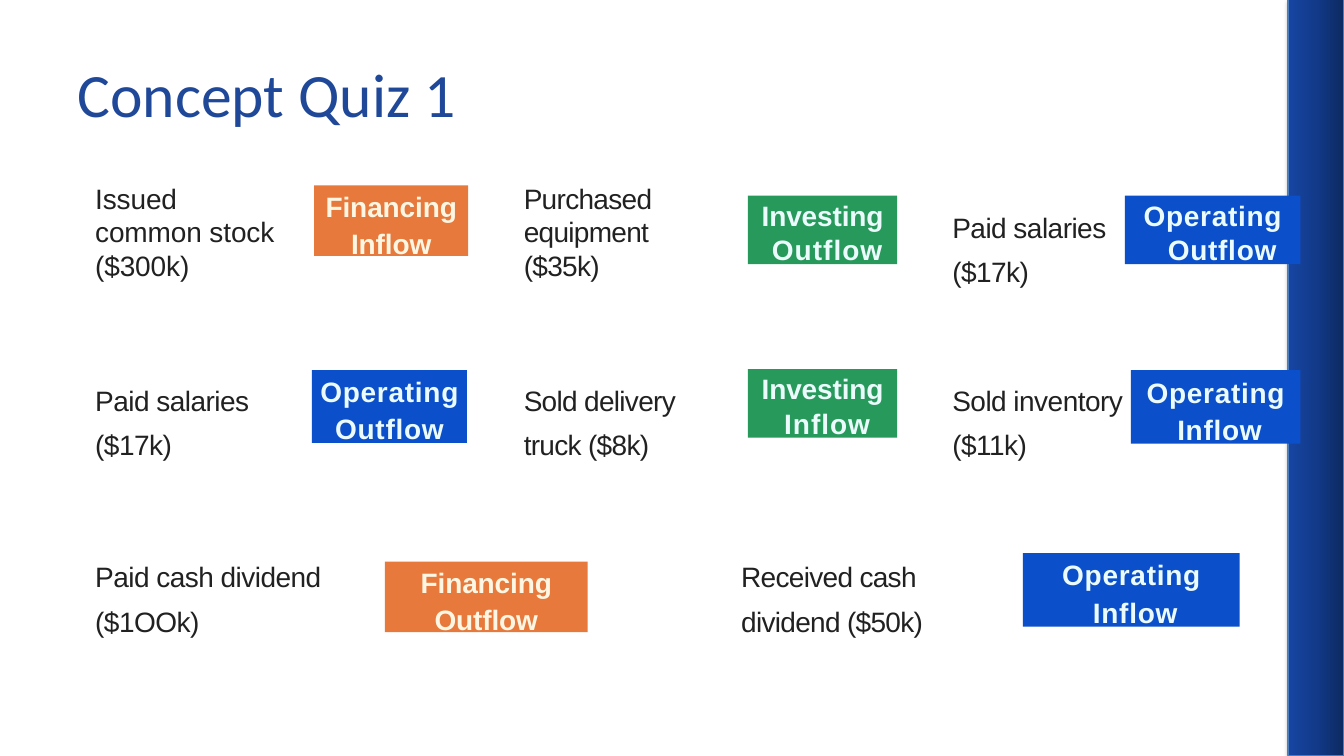
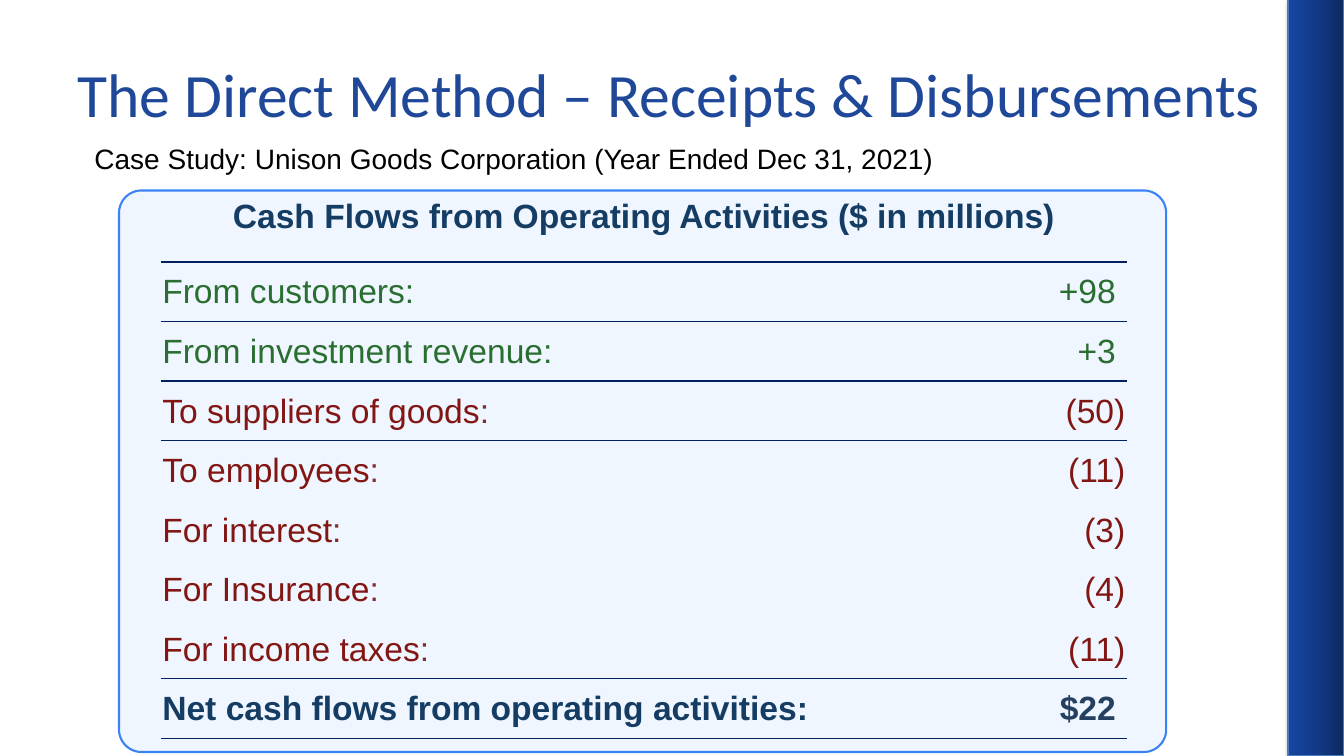
from copy import deepcopy
from dataclasses import dataclass

from lxml import etree
from pptx import Presentation
from pptx.dml.color import RGBColor
from pptx.enum.shapes import MSO_SHAPE
from pptx.enum.text import MSO_ANCHOR, MSO_AUTO_SIZE, PP_ALIGN
from pptx.oxml.ns import qn
from pptx.util import Cm, Pt

RECTANGLE, ROUNDED = MSO_SHAPE.RECTANGLE, MSO_SHAPE.ROUNDED_RECTANGLE
TOP, MIDDLE = MSO_ANCHOR.TOP, MSO_ANCHOR.MIDDLE
LEFT, CENTER, RIGHT = PP_ALIGN.LEFT, PP_ALIGN.CENTER, PP_ALIGN.RIGHT
FIXED = MSO_AUTO_SIZE.NONE
TITLE_ONLY = 5
PLAIN_TABLE = "{2D5ABB26-0587-4C30-8999-92F81FD0307C}"
BODY_FONT, TITLE_FONT = "Arial", "Calibri"

COLORS = {
    "title": "1F4899",
    "band_dark": "0D2960",
    "band_mid": "123A89",
    "band_light": "1645A2",
    "band_line": "4B7EBC",
    "black": "000000",
    "note": "212121",
    "orange": "E6793B",
    "green": "26995B",
    "blue": "0C4FCA",
    "cream": "FDF6E2",
    "ice": "EBFBFB",
    "panel": "EFF6FF",
    "panel_line": "3B82F6",
    "rule": "002060",
    "heading": "153D64",
    "receipt": "2B6E31",
    "payment": "821613",
    "payment_colon": "802D2D",
    "total": "254061",
}


@dataclass(frozen=True)
class Category:
    name: str
    fill: str
    ink: str
    name_spacing: float
    flow_spacing: float


@dataclass(frozen=True)
class Note:
    """A transaction; lengths in cm, line pitch in points (0 for single)."""
    text: str
    left: float
    top: float
    width: float
    spacing: float
    pitch: float = 31.2


@dataclass(frozen=True)
class Tag:
    """A classification; lengths in cm, gap between lines in points."""
    category: Category
    flow: str
    left: float
    top: float
    width: float
    height: float
    shift: float = 0
    inset: float = 0.1
    gap: float = 2.5


@dataclass(frozen=True)
class Entry:
    label: str
    amount: str
    ink: str
    colon_ink: str
    amount_ink: str
    bold: bool = False


FINANCING = Category("Financing", "orange", "cream", -0.1, -0.1)
INVESTING = Category("Investing", "green", "ice", -0.1, 0.7)
OPERATING = Category("Operating", "blue", "ice", 0.5, 0.5)

# Quiz grid: three columns, three rows
COLUMNS = [2.36 + 10.8 * index for index in range(3)]
ROWS = (4.45, 9.3, 13.69)

NOTES = (
    Note("Issued common stock ($300k)", COLUMNS[0], ROWS[0], 4.62, -0.1, 0),
    Note("Purchased equipment ($35k)", COLUMNS[1], ROWS[0], 3.5, -0.5, 0),
    Note("Paid salaries ($17k)", COLUMNS[2], 4.93, 4.1, -0.4),
    Note("Paid salaries ($17k)", COLUMNS[0], ROWS[1], 4.1, -0.4),
    Note("Sold delivery truck ($8k)", COLUMNS[1], ROWS[1], 4.1, -0.5),
    Note("Sold inventory ($11k)", COLUMNS[2], ROWS[1], 4.5, -0.4),
    Note("Paid cash dividend ($1OOk)", COLUMNS[0], ROWS[2], 5.82, -0.4, 32.2),
    Note("Received cash dividend ($50k)", 18.64, ROWS[2], 4.9, -0.5, 32.2),
)

TAGS = (
    Tag(FINANCING, "Inflow", 7.92, 4.67, 3.88, 1.78),
    Tag(INVESTING, "Outflow", 18.85, 4.93, 3.76, 1.73, 0.23, 0.06, 0.7),
    Tag(OPERATING, "Outflow", 28.35, 4.93, 4.42, 1.73, 0.48, 0.06, 0.7),
    Tag(OPERATING, "Outflow", 7.86, 9.33, 3.91, 1.83),
    Tag(INVESTING, "Inflow", 18.85, 9.3, 3.76, 1.73, 0.23, 0.06, 0.7),
    Tag(OPERATING, "Inflow", 28.5, 9.33, 4.27, 1.85, 0.2, 0.12, 3),
    Tag(FINANCING, "Outflow", 9.7, 14.15, 5.11, 1.78),
    Tag(OPERATING, "Inflow", 25.78, 13.94, 5.46, 1.85, 0.2, 0.12, 3),
)


def receipt(label: str, amount: str) -> Entry:
    return Entry(label, amount, "receipt", "receipt", "receipt")


def payment(label: str, amount: str) -> Entry:
    return Entry(label, amount, "payment", "payment_colon", "payment")


ENTRIES = (
    receipt("From customers", "+98"),
    receipt("From investment revenue", "+3"),
    payment("To suppliers of goods", "(50)"),
    payment("To employees", "(11)"),
    payment("For interest", "(3)"),
    payment("For Insurance", "(4)"),
    payment("For income taxes", "(11)"),
    Entry("Net cash flows from operating activities", "$22",
          "heading", "heading", "total", True),
)
RULED_ROWS = {0, 2, 7, 8}


def color(name: str) -> RGBColor:
    return RGBColor.from_string(COLORS[name])


def set_font(font, ink: str, size: float, bold: bool = False, name: str = BODY_FONT) -> None:
    font.name, font.size, font.bold = name, Pt(size), bold
    font.color.rgb = color(ink)


def add_span(paragraph, text: str, spacing: float = 0):
    span = paragraph.add_run()
    span.text = text
    if spacing:
        span.font._element.set("spc", str(round(spacing * 100)))
    return span


def set_frame(frame, inset_top: float, inset_left: float = 0) -> None:
    frame.word_wrap, frame.auto_size = True, FIXED
    frame.vertical_anchor = TOP
    frame.margin_left, frame.margin_top = Cm(inset_left), Cm(inset_top)
    frame.margin_right = frame.margin_bottom = 0


def add_block(page, kind, left: float, top: float, width: float, height: float,
              fill: str, line: str = "", weight: float = 0):
    block = page.shapes.add_shape(kind, Cm(left), Cm(top), Cm(width), Cm(height))
    block.shadow.inherit = False
    block.fill.solid()
    block.fill.fore_color.rgb = color(fill)
    if line:
        block.line.color.rgb = color(line)
        block.line.width = Pt(weight)
    else:
        block.line.fill.background()
    return block


def add_band(page) -> None:
    """Draw the right-hand band and move it to the shared layout."""
    band = add_block(page, RECTANGLE, 32.46, 0, 1.41, 19.05, "band_mid", "band_line", 0.75)
    band.fill.gradient()
    band.fill.gradient_angle = 180
    properties = band.element.spPr
    stop_list = properties.find(qn("a:gradFill")).find(qn("a:gsLst"))
    stop_list.insert(1, deepcopy(stop_list[0]))
    names = ("band_dark", "band_mid", "band_light")
    for index, (stop, name) in enumerate(zip(band.fill.gradient_stops, names)):
        stop.position = index / 2
        stop.color.rgb = color(name)
    # Soft shadow
    shadow = etree.SubElement(properties.find(qn("a:effectLst")), qn("a:outerShdw"),
                              blurRad=str(Pt(3.1)), dist=str(Pt(1.8)),
                              dir="5400000", rotWithShape="0")
    tint = etree.SubElement(shadow, qn("a:srgbClr"), val=COLORS["black"])
    etree.SubElement(tint, qn("a:alpha"), val="35000")
    band.element.nvSpPr.cNvPr.set("id", "20")
    page.slide_layout.shapes.element.insert(2, band.element)


def add_page(deck, title: str):
    page = deck.slides.add_slide(deck.slide_layouts[TITLE_ONLY])
    holder = page.shapes.title
    holder.left, holder.top = Cm(1.7), Cm(0.76)
    holder.width, holder.height = Cm(30.48), Cm(3.18)
    frame = holder.text_frame
    frame.text = title
    frame.auto_size, frame.vertical_anchor = FIXED, MIDDLE
    paragraph = frame.paragraphs[0]
    paragraph.alignment = LEFT
    set_font(paragraph.font, "title", 44, name=TITLE_FONT)
    return page


def add_note(page, note: Note) -> None:
    box = page.shapes.add_textbox(Cm(note.left), Cm(note.top), Cm(note.width), Cm(2.25))
    set_frame(box.text_frame, 0.12, 0.04)
    paragraph = box.text_frame.paragraphs[0]
    if note.pitch:
        paragraph.line_spacing = Pt(note.pitch)
    set_font(paragraph.font, "note", 20)
    add_span(paragraph, note.text, note.spacing)


def add_tag(page, tag: Tag) -> None:
    category = tag.category
    block = add_block(page, RECTANGLE, tag.left, tag.top, tag.width, tag.height, category.fill)
    frame = block.text_frame
    set_frame(frame, tag.inset)
    first, second = frame.paragraphs[0], frame.add_paragraph()
    add_span(first, category.name, category.name_spacing)
    add_span(second, tag.flow, category.flow_spacing)
    second.space_before = Pt(tag.gap)
    if tag.shift:
        second._p.get_or_add_pPr().set("marL", str(Cm(tag.shift)))
    for paragraph in (first, second):
        paragraph.alignment = CENTER
        set_font(paragraph.font, category.ink, 20, True)


def add_rule(cell, side: str) -> None:
    line = etree.SubElement(cell._tc.get_or_add_tcPr(), qn(f"a:{side}"), w=str(Pt(1)))
    fill = etree.SubElement(line, qn("a:solidFill"))
    etree.SubElement(fill, qn("a:srgbClr"), val=COLORS["rule"])


def add_cash_table(page) -> None:
    count = len(ENTRIES) + 1
    frame = page.shapes.add_table(count, 2, Cm(4.06), Cm(4.8), Cm(24.33), Cm(13.84))
    table = frame.table
    table.first_row = table.horz_banding = False
    table._tbl.tblPr.find(qn("a:tableStyleId")).text = PLAIN_TABLE
    table.columns[0].width, table.columns[1].width = Cm(20.55), Cm(3.78)
    for index, row in enumerate(table.rows):
        row.height = Cm(1.5 if index else 1.8)
        for cell in row.cells:
            if index - 1 in RULED_ROWS:
                add_rule(cell, "lnT")
            if index in RULED_ROWS:
                add_rule(cell, "lnB")
            cell.fill.background()
            cell.margin_left = cell.margin_right = cell.margin_top = Cm(0.03)
            cell.margin_bottom = 0
            cell.vertical_anchor = MIDDLE

    # Heading row
    heading = table.cell(0, 0)
    heading.merge(table.cell(0, 1))
    heading.margin_top = Cm(0.18)
    heading.vertical_anchor = TOP
    heading.text = "Cash Flows from Operating Activities ($ in millions)"
    paragraph = heading.text_frame.paragraphs[0]
    paragraph.alignment = CENTER
    set_font(paragraph.font, "heading", 24, True)

    # Receipts, payments and total
    for index, entry in enumerate(ENTRIES, start=1):
        label, amount = table.cell(index, 0), table.cell(index, 1)
        paragraph = label.text_frame.paragraphs[0]
        set_font(paragraph.font, entry.ink, 24, entry.bold)
        add_span(paragraph, entry.label)
        add_span(paragraph, ":").font.color.rgb = color(entry.colon_ink)
        amount.text = entry.amount
        if not entry.amount.endswith(")"):
            amount.margin_right = Cm(0.27)
        paragraph = amount.text_frame.paragraphs[0]
        paragraph.alignment = RIGHT
        set_font(paragraph.font, entry.amount_ink, 24, entry.bold)


def add_case_line(page) -> None:
    box = page.shapes.add_textbox(Cm(2.13), Cm(3.43), Cm(27.69), Cm(1.12))
    box.text_frame.word_wrap = True
    paragraph = box.text_frame.paragraphs[0]
    paragraph.text = "Case Study: Unison Goods Corporation (Year Ended Dec 31, 2021)"
    set_font(paragraph.font, "black", 20)


def main() -> None:
    deck = Presentation()
    deck.slide_width, deck.slide_height = Cm(33.87), Cm(19.05)

    # Quiz
    quiz = add_page(deck, "Concept Quiz 1")
    add_band(quiz)
    for note in NOTES:
        add_note(quiz, note)
    for tag in TAGS:
        add_tag(quiz, tag)

    # Direct method
    method = add_page(deck, "The Direct Method – Receipts & Disbursements")
    panel = add_block(method, ROUNDED, 3, 4.8, 26.39, 14.15, "panel", "panel_line", 1.5)
    panel.adjustments[0] = 0.04
    add_cash_table(method)
    add_case_line(method)

    deck.save("out.pptx")


if __name__ == "__main__":
    main()
